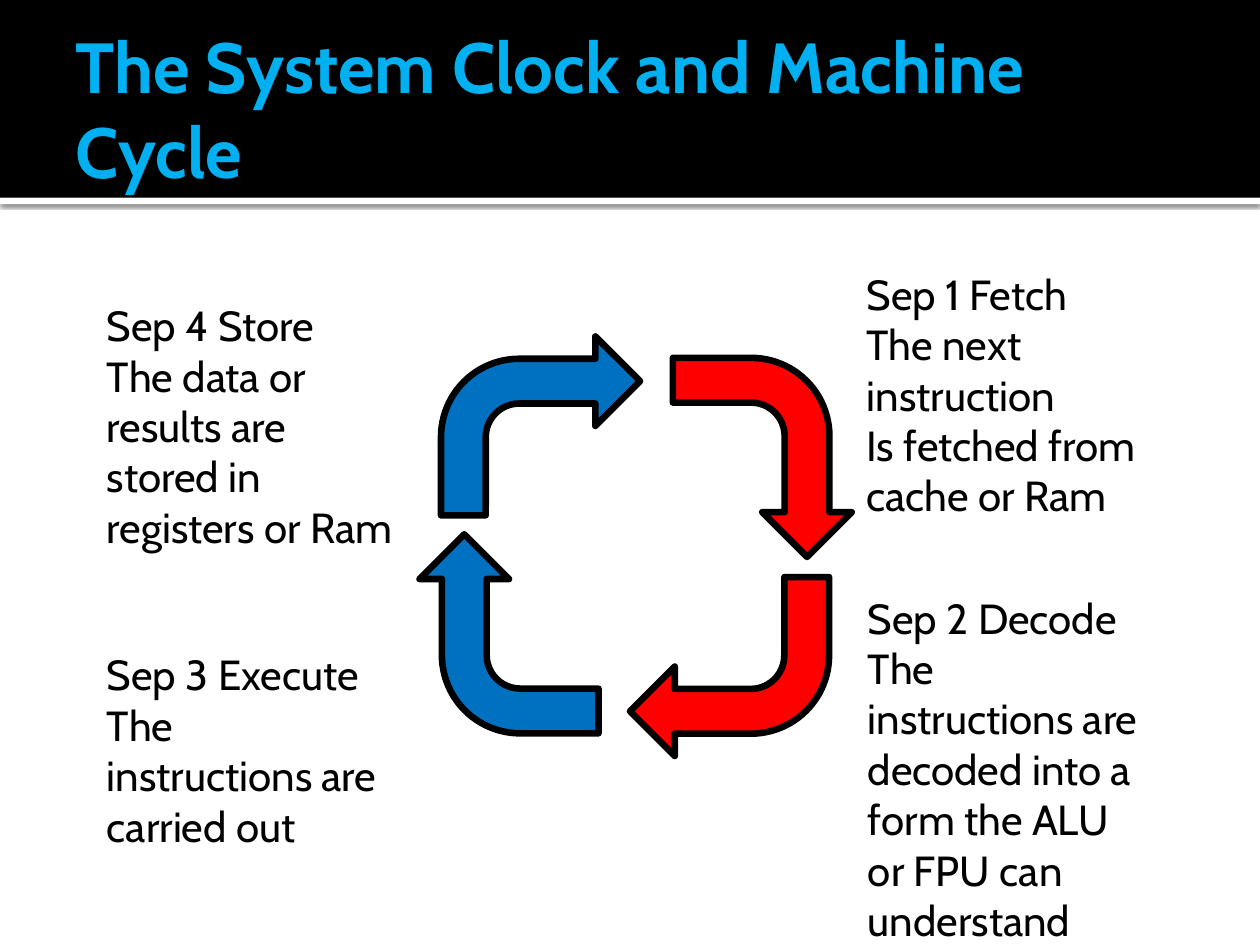
from dataclasses import dataclass

from lxml.etree import SubElement
from pptx import Presentation
from pptx.dml.color import RGBColor
from pptx.enum.shapes import MSO_SHAPE
from pptx.enum.text import MSO_ANCHOR, MSO_AUTO_SIZE
from pptx.oxml.ns import qn
from pptx.util import Inches, Pt


@dataclass(frozen=True)
class Theme:
    font: str = "Cabin"
    title_size: float = 40.5
    body_size: float = 24
    outline_width: float = 3.78
    black: str = "000000"
    white: str = "FFFFFF"
    title: str = "00B0F0"
    red: str = "FF0000"
    blue: str = "0070C0"


theme = Theme()


def add_text(parent, text, box, *, size, color, bold=False,
             anchor=MSO_ANCHOR.TOP, right_inset=0.1, fit=MSO_AUTO_SIZE.NONE):
    frame = parent.add_textbox(*map(Inches, box)).text_frame
    frame.word_wrap = True
    frame.auto_size = fit
    frame.vertical_anchor = anchor
    frame.margin_right = Inches(right_inset)
    frame.text = text
    for paragraph in frame.paragraphs:
        font = paragraph.runs[0].font
        font.name = theme.font
        font.size = Pt(size)
        font.bold = bold
        font.color.rgb = RGBColor.from_string(color)


def add_filled(parent, preset, box, color):
    shape = parent.add_shape(preset, *map(Inches, box))
    shape.shadow.inherit = False
    shape.fill.solid()
    shape.fill.fore_color.rgb = RGBColor.from_string(color)
    shape.line.fill.background()
    return shape


prs = Presentation()
prs.slide_width = Inches(10)
prs.slide_height = Inches(7.5)
slide = prs.slides.add_slide(prs.slide_layouts[6])

divider = add_filled(slide.shapes, MSO_SHAPE.RECTANGLE, (0, 1.57, 10, 0.05), theme.white)
effects = divider._element.spPr.find(qn("a:effectLst"))
shadow = SubElement(effects, qn("a:outerShdw"), blurRad=str(Pt(2.5)), dist=str(Pt(0.8)),
                    dir="5400000", algn="tl", rotWithShape="0")
shadow_color = SubElement(shadow, qn("a:srgbClr"), val=theme.black)
SubElement(shadow_color, qn("a:alpha"), val="60000")

add_filled(slide.shapes, MSO_SHAPE.RECTANGLE, (0, 0, 10, 1.57), theme.black)
add_text(slide.shapes, "The System Clock and Machine Cycle", (0.5, 0.17, 9, 1.37),
         size=theme.title_size, color=theme.title, bold=True,
         anchor=MSO_ANCHOR.MIDDLE, right_inset=0.05)

steps = [
    ("Sep 1 Fetch\nThe next instruction\nIs fetched from cache or Ram",
     (6.78, 2.08, 2.42, 2.12), (5.26, 2.92), 90, theme.red),
    ("Sep 2 Decode\nThe instructions are decoded into a form the ALU or FPU can understand",
     (6.79, 4.65, 2.42, 2.52), (5, 4.58), 180, theme.red),
    ("Sep 3 Execute\nThe instructions are carried out",
     (0.75, 5.1, 2.42, 1.31), (3.25, 4.32), 270, theme.blue),
    ("Sep 4 Store\nThe data or results are stored in registers or Ram",
     (0.75, 2.33, 2.58, 2.12), (3.5, 2.67), 0, theme.blue),
]

for description, text_box, arrow_corner, rotation, color in steps:
    step = slide.shapes.add_group_shape().shapes
    arrow = add_filled(step, MSO_SHAPE.BENT_ARROW, (*arrow_corner, 1.58, 1.42), color)
    arrow.rotation = rotation
    arrow.line.color.rgb = RGBColor.from_string(theme.black)
    arrow.line.width = Pt(theme.outline_width)
    add_text(step, description, text_box, size=theme.body_size, color=theme.black,
             fit=MSO_AUTO_SIZE.SHAPE_TO_FIT_TEXT)

prs.save("out.pptx")
